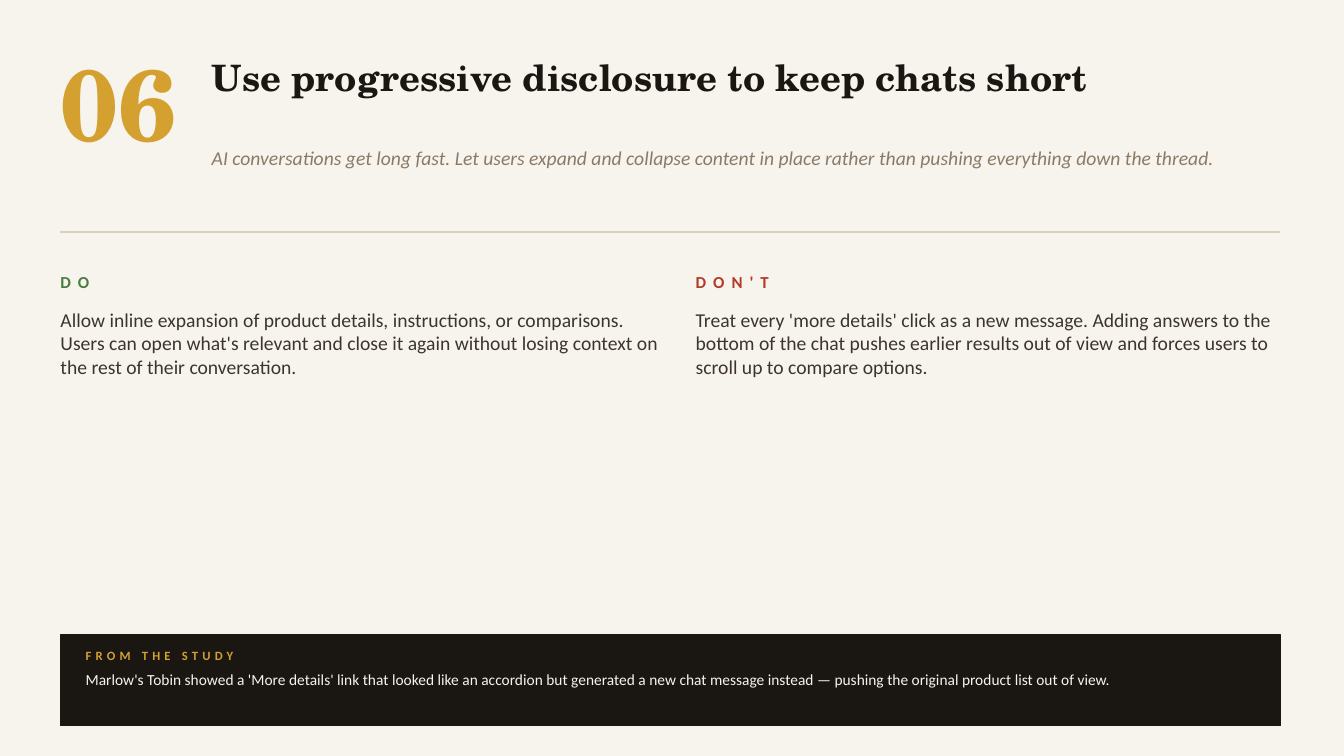
from lxml import etree
from pptx import Presentation
from pptx import util as u
from pptx.dml.color import RGBColor
from pptx.enum import shapes, text
from pptx.oxml.ns import qn

PX = 9144
SERIF, SANS = "TeX Gyre Schola", "Calibri"
COLORS = {
    "paper": "F7F4EE", "ink": "1A1612", "gold": "D4A030", "muted": "8A7A66",
    "rule": "D8CFC0", "do": "4A7D3F", "dont": "B33A2A", "body": "3D352D",
}
ADVICE = [
    ("DO", "do",
     "Allow inline expansion of product details, instructions, or comparisons. "
     "Users can open what's relevant and close it again without losing context "
     "on the rest of their conversation."),
    ("DON'T", "dont",
     "Treat every 'more details' click as a new message. Adding answers to the "
     "bottom of the chat pushes earlier results out of view and forces users to "
     "scroll up to compare options."),
]


def px(n):
    """Turn whole px into EMU."""
    return u.Emu(n * PX)


def rgb(name):
    """Look up a named colour."""
    return RGBColor.from_string(COLORS[name])


def add_text(s, box, words, size, color, font=SANS, bold=False, italic=False,
             spacing=0, after=0, middle=False):
    """Add a one-paragraph text box without margins."""
    tf = s.shapes.add_textbox(*map(px, box)).text_frame
    tf.word_wrap = True
    tf.margin_left = tf.margin_right = tf.margin_top = tf.margin_bottom = 0
    tf.vertical_anchor = text.MSO_ANCHOR.MIDDLE if middle else text.MSO_ANCHOR.TOP
    p = tf.paragraphs[0]
    p.space_after = u.Pt(after)
    r = p.add_run()
    r.text = words
    r.font.name = font
    r.font.size = u.Pt(size)
    r.font.bold = bold
    r.font.italic = italic
    r.font.color.rgb = rgb(color)
    if spacing:
        r.font._element.set("spc", str(spacing * 100))


def add_label(s, box, words, size, color, spacing):
    """Add a bold letter-spaced label."""
    add_text(s, box, words, size, color, bold=True, spacing=spacing, middle=True)


def add_rule(s, x1, x2, y):
    """Add a thin horizontal line."""
    sp = s.shapes.add_connector(
        shapes.MSO_CONNECTOR.STRAIGHT, px(x1), px(y), px(x2), px(y))
    sp.line.color.rgb = rgb("rule")
    sp.line.width = u.Pt(1)
    etree.SubElement(sp._element.spPr, qn("a:effectLst"))


def add_panel(s, box, color):
    """Add a filled rectangle with a matching outline."""
    sp = s.shapes.add_shape(shapes.MSO_SHAPE.RECTANGLE, *map(px, box))
    sp.shadow.inherit = False
    sp.fill.solid()
    sp.fill.fore_color.rgb = rgb(color)
    sp.line.color.rgb = rgb(color)
    sp.line.width = u.Pt(1)


def add_header(s):
    """Add the number, title, summary and dividing line."""
    add_text(s, (60, 40, 150, 120), "06", 72, "gold", font=SERIF, bold=True)
    add_text(s, (210, 55, 1060, 110),
             "Use progressive disclosure to keep chats short",
             26, "ink", font=SERIF, bold=True)
    add_text(s, (210, 145, 1060, 60),
             "AI conversations get long fast. Let users expand and collapse content "
             "in place rather than pushing everything down the thread.",
             14, "muted", italic=True)
    add_rule(s, 60, 1270, 230)


def add_study(s):
    """Add the dark panel with the study finding."""
    add_panel(s, (60, 630, 1210, 90), "ink")
    add_label(s, (85, 638, 250, 25), "FROM THE STUDY", 9, "gold", 3)
    add_text(s, (85, 665, 1160, 50),
             "Marlow's Tobin showed a 'More details' link that looked like an "
             "accordion but generated a new chat message instead — pushing the "
             "original product list out of view.", 11, "paper")


def main():
    """Build and save the slide."""
    prs = Presentation()
    prs.slide_width, prs.slide_height = px(1333), px(750)
    s = prs.slides.add_slide(prs.slide_layouts[6])
    s.background.fill.solid()
    s.background.fill.fore_color.rgb = rgb("paper")
    add_header(s)
    for i, (label, color, advice) in enumerate(ADVICE):
        x = 60 + i * 630
        add_label(s, (x, 260, 600, 40), label, 12, color, 5)
        add_text(s, (x, 305, 600, 310), advice, 14, "body", after=8)
    add_study(s)
    prs.save("out.pptx")


if __name__ == "__main__":
    main()
